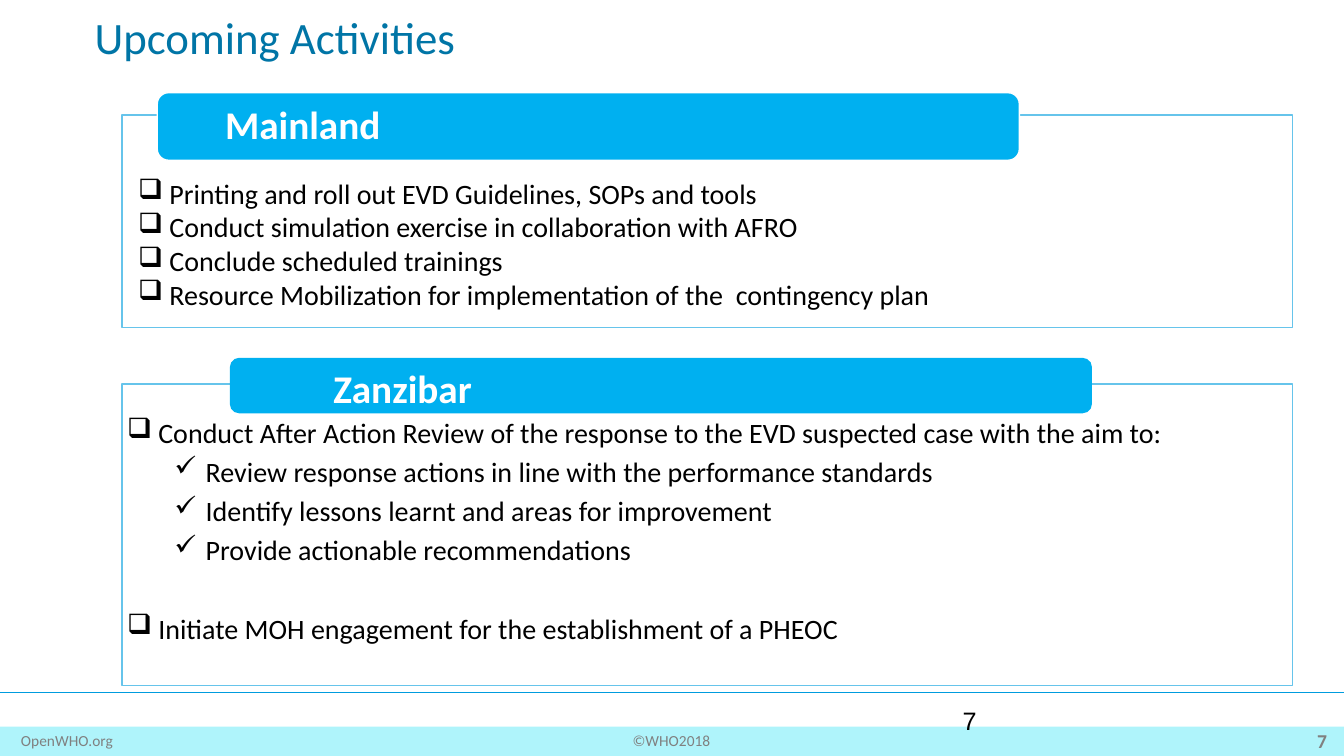
from lxml.etree import SubElement
from pptx import Presentation
from pptx.dml.color import RGBColor
from pptx.enum.shapes import MSO_CONNECTOR as Connector, MSO_SHAPE as Shape
from pptx.enum.text import MSO_ANCHOR as Anchor, PP_ALIGN as Align
from pptx.oxml.ns import qn
from pptx.util import Inches, Pt


def color(value):
    return RGBColor.from_string(value)


class ActivityPage:
    FONT = "Calibri"
    TITLE, GREY, BLACK, WHITE = "0075A6", "808080", "000000", "FFFFFF"
    BAR, FRAME, RULE, BAND = "00B0F0", "66C4EB", "009CDE", "AFF4FB"

    def __init__(self, deck):
        self.page = deck.slides.add_slide(deck.slide_layouts[6])

    def shape(self, kind, area, fill=None, line=None):
        box = self.page.shapes.add_shape(kind, *map(Inches, area))
        box.shadow.inherit = False
        if fill:
            box.fill.solid()
            box.fill.fore_color.rgb = color(fill)
        else:
            box.fill.background()
        if line:
            box.line.color.rgb = color(line)
            box.line.width = Pt(0.96)
        else:
            box.line.fill.background()
        return box

    def add_span(self, para, text, size, tint, bold=False, font=FONT):
        span = para.add_run()
        span.text = text
        span.font.name = font
        span.font.size = Pt(size)
        span.font.bold = bold
        span.font.color.rgb = color(tint)

    def frame(self, box, insets, anchor=Anchor.TOP):
        frame = box.text_frame
        frame.word_wrap = True
        frame.vertical_anchor = anchor
        (frame.margin_left, frame.margin_top,
         frame.margin_right, frame.margin_bottom) = map(Inches, insets)
        return frame

    def label(self, area, text, size, tint, align=Align.LEFT, anchor=Anchor.TOP,
              insets=(0.1, 0.05, 0.1, 0.05), spacing=None, **style):
        box = self.page.shapes.add_textbox(*map(Inches, area))
        para = self.frame(box, insets, anchor).paragraphs[0]
        para.alignment = align
        para.line_spacing = spacing
        self.add_span(para, text, size, tint, **style)

    def heading(self, area, text, indent, line=None):
        box = self.shape(Shape.ROUNDED_RECTANGLE, area, self.BAR, line)
        para = self.frame(box, (indent, 0.04, 0, 0)).paragraphs[0]
        para.alignment = Align.LEFT
        self.add_span(para, text, 28, self.WHITE, bold=True)

    def bullets(self, area, items):
        """Each item is (text, bullet, left margin, space before in points)."""
        box = self.page.shapes.add_textbox(*map(Inches, area))
        frame = self.frame(box, (0, 0, 0, 0))
        for index, (text, mark, margin, gap) in enumerate(items):
            para = frame.add_paragraph() if index else frame.paragraphs[0]
            para.space_before = Pt(gap)
            properties = para._p.get_or_add_pPr()
            properties.set("marL", str(Inches(margin)))
            properties.set("indent", str(Inches(-0.31)))
            SubElement(properties, qn("a:buChar")).set("char", mark)
            self.add_span(para, text, 20, self.BLACK)

    def rule(self, left, right, top):
        line = self.page.shapes.add_connector(
            Connector.STRAIGHT, Inches(left), Inches(top), Inches(right), Inches(top))
        line.line.color.rgb = color(self.RULE)
        line.line.width = Pt(0.48)
        SubElement(line._element.spPr, qn("a:effectLst"))


def main():
    deck = Presentation()
    deck.slide_width, deck.slide_height = Inches(13.33), Inches(7.5)
    page = ActivityPage(deck)

    # Footer
    page.shape(Shape.RECTANGLE, (0, 7.21, 13.33, 0.3), fill=page.BAND)
    for left, text, size, align, bold in (
            (0.11, "OpenWHO.org", 11, Align.LEFT, False),
            (5.16, "©WHO2018", 11, Align.CENTER, False),
            (10.26, "7", 14, Align.RIGHT, True)):
        page.label((left, 7.22, 3, 0.26), text, size, page.GREY, align,
                   Anchor.MIDDLE, bold=bold)
    page.rule(0, 13.33, 6.87)
    page.label((9.45, 6.95, 3, 0.4), "7", 18, page.BLACK, font="Arial")

    # Title
    page.label((0.84, 0.13, 5.82, 0.56), "Upcoming Activities", 32, page.TITLE,
               insets=(0.1, 0.03, 0.1, 0.05), spacing=0.9)

    # Mainland panel
    page.shape(Shape.RECTANGLE, (1.21, 1.14, 11.61, 2.11), line=page.FRAME)
    page.heading((1.56, 0.92, 8.55, 0.67), "Mainland", 0.64, line=page.WHITE)
    mainland = (
        "Printing and roll out EVD Guidelines, SOPs and tools",
        "Conduct simulation exercise in collaboration with AFRO",
        "Conclude scheduled trainings",
        "Resource Mobilization for implementation of the  contingency plan",
    )
    page.bullets((1.37, 1.75, 10.24, 1.4),
                 [(text, "❑", 0.31, 0) for text in mainland])

    # Zanzibar panel
    page.shape(Shape.RECTANGLE, (1.21, 3.81, 11.61, 2.99), line=page.FRAME)
    page.heading((2.28, 3.55, 8.55, 0.55), "Zanzibar", 1)
    aims = (
        "Review response actions in line with the performance standards",
        "Identify lessons learnt and areas for improvement",
        "Provide actionable recommendations",
    )
    page.bullets((1.23, 4.12, 11.48, 2.37), [
        ("Conduct After Action Review of the response to the EVD suspected case "
         "with the aim to:", "❑", 0.34, 0),
        *((aim, "✓", 0.81, 4) for aim in aims),
        ("Initiate MOH engagement for the establishment of a PHEOC", "❑", 0.34, 32),
    ])

    deck.save("out.pptx")


if __name__ == "__main__":
    main()
